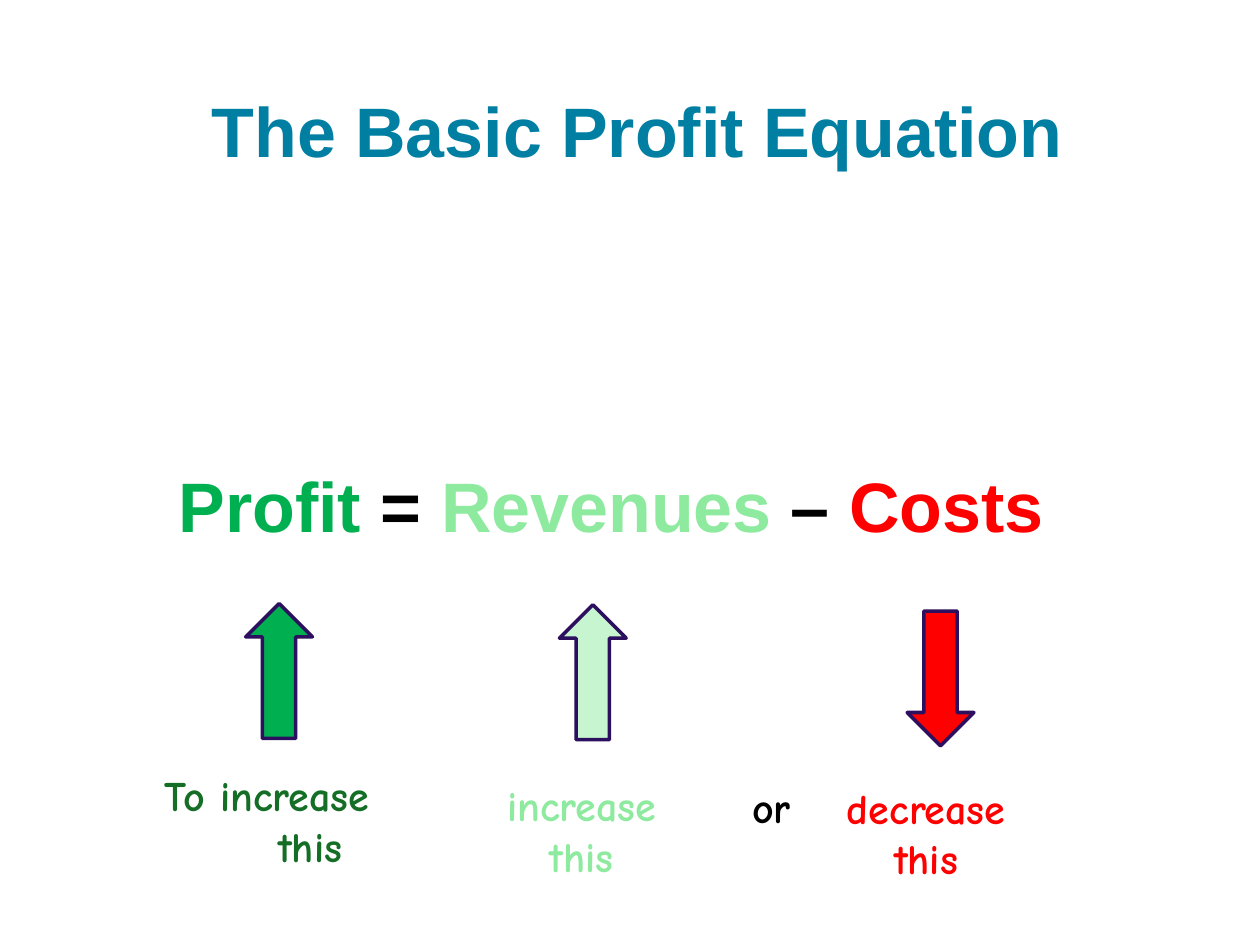
from pptx import Presentation
from pptx.dml.color import RGBColor
from pptx.enum.shapes import MSO_SHAPE as SHAPE
from pptx.enum.text import MSO_ANCHOR as ANCHOR, PP_ALIGN as ALIGN
from pptx.util import Inches, Pt

BLUE = RGBColor(0x00, 0x7F, 0xA3)
BLACK = RGBColor(0x00, 0x00, 0x00)
GREEN = RGBColor(0x00, 0xB0, 0x50)
DARK_GREEN = RGBColor(0x14, 0x6E, 0x25)
LIGHT_GREEN = RGBColor(0x8D, 0xEA, 0x9F)
PALE_GREEN = RGBColor(0xC6, 0xF5, 0xCF)
RED = RGBColor(0xFF, 0x00, 0x00)
PURPLE = RGBColor(0x2C, 0x10, 0x5F)


class ProfitSlide:
    """Draws headings, equations, arrows and labels in one style on a slide."""

    heading_font, heading_size = "Arial", Pt(40)
    label_font, label_size = "Comic Neue", Pt(24)

    def __init__(self, slide):
        self.shapes = slide.shapes

    def format_run(self, r, name, size, color):
        r.font.name = name
        r.font.size = size
        r.font.bold = True
        r.font.color.rgb = color

    def title(self, text, x, y, w, h, inset):
        tf = self.shapes.add_textbox(Inches(x), Inches(y), Inches(w), Inches(h)).text_frame
        tf.word_wrap = True
        tf.vertical_anchor = ANCHOR.BOTTOM
        tf.margin_left = Inches(inset)
        tf.margin_right = tf.margin_top = tf.margin_bottom = Inches(0.1)
        tf.text = text
        self.format_run(tf.paragraphs[0].runs[0], self.heading_font, self.heading_size, BLUE)

    def equation(self, terms, x, y, w, h, inset):
        sp = self.shapes.add_shape(SHAPE.ROUNDED_RECTANGLE, Inches(x), Inches(y), Inches(w), Inches(h))
        sp.shadow.inherit = False
        sp.fill.background()
        sp.line.fill.background()
        tf = sp.text_frame
        tf.word_wrap = True
        tf.vertical_anchor = ANCHOR.MIDDLE
        tf.margin_left = Inches(inset)
        p = tf.paragraphs[0]
        p.alignment = ALIGN.CENTER
        for text, color in terms:
            r = p.add_run()
            r.text = text
            self.format_run(r, self.heading_font, self.heading_size, color)

    def arrow(self, kind, x, y, fill):
        sp = self.shapes.add_shape(kind, Inches(x), Inches(y), Inches(0.53), Inches(1.07))
        sp.shadow.inherit = False
        sp.fill.solid()
        sp.fill.fore_color.rgb = fill
        sp.line.color.rgb = PURPLE
        sp.line.width = Pt(2)

    def label(self, text, x, y, w, h, color, align=ALIGN.LEFT):
        tf = self.shapes.add_textbox(Inches(x), Inches(y), Inches(w), Inches(h)).text_frame
        tf.word_wrap = True
        tf.text = text
        for p in tf.paragraphs:
            p.alignment = align
            self.format_run(p.runs[0], self.label_font, self.label_size, color)
        return tf.paragraphs[0]._p.get_or_add_pPr()

    def hanging_label(self, text, x, y, w, h, color, hang):
        pPr = self.label(text, x, y, w, h, color)
        pPr.set("marL", str(Inches(hang)))
        pPr.set("indent", str(-Inches(hang)))

    def stepped_label(self, text, x, y, w, h, color, step):
        pPr = self.label(text, x, y, w, h, color, ALIGN.CENTER)
        pPr.set("marR", str(Inches(step)))


def main():
    prs = Presentation()
    prs.slide_width, prs.slide_height = Inches(10), Inches(7.5)
    s = ProfitSlide(prs.slides.add_slide(prs.slide_layouts[6]))

    s.title("The Basic Profit Equation", 0.58, 0.26, 9, 1.2, 1.1)
    terms = [("Profit", GREEN), (" = ", BLACK), ("Revenues", LIGHT_GREEN),
             (" – ", BLACK), ("Costs", RED)]
    s.equation(terms, 0.58, 1.42, 8.25, 5.17, 0.39)

    s.arrow(SHAPE.UP_ARROW, 1.95, 4.79, GREEN)
    s.hanging_label("To increase this", 1.21, 6.06, 2.06, 0.91, DARK_GREEN, 0.9)
    s.arrow(SHAPE.UP_ARROW, 4.44, 4.8, PALE_GREEN)
    s.stepped_label("increase\nthis", 3.66, 6.14, 2.14, 0.91, LIGHT_GREEN, 0.23)
    s.label("or", 5.87, 6.15, 0.95, 0.5, BLACK)
    s.arrow(SHAPE.DOWN_ARROW, 7.2, 4.85, RED)
    s.stepped_label("decrease\nthis", 6.23, 6.16, 2.47, 0.91, RED, 0.23)

    prs.save("out.pptx")


if __name__ == "__main__":
    main()
